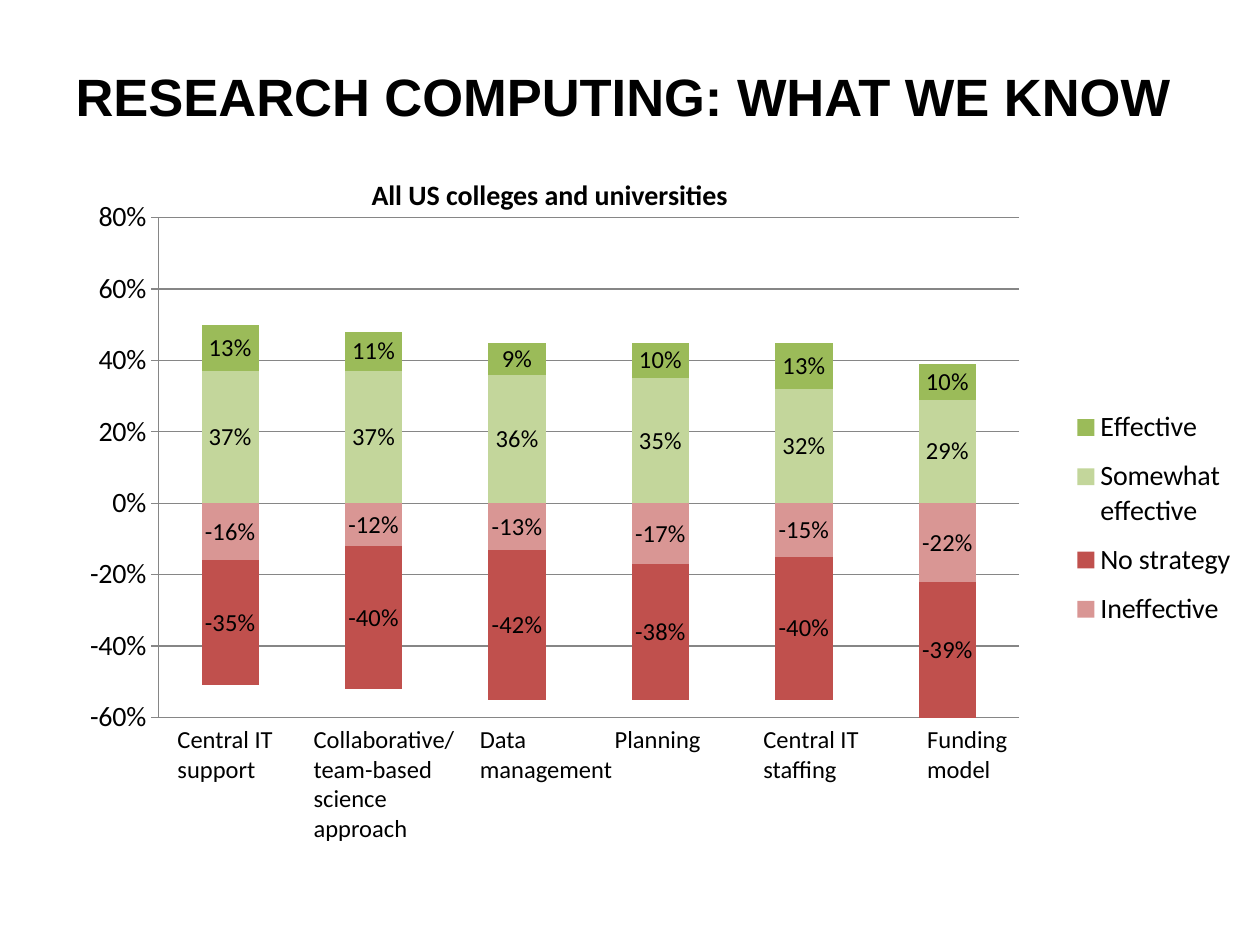
from dataclasses import dataclass

import pptx
import pptx.chart.data
import pptx.dml.color
import pptx.enum.chart
import pptx.enum.text
import pptx.oxml
import pptx.oxml.ns
import pptx.util
from pptx.util import Inches

RGBColor = pptx.dml.color.RGBColor
BLACK = RGBColor(0x00, 0x00, 0x00)
GRID_GRAY = RGBColor(0x86, 0x86, 0x86)
RED = RGBColor(0xC0, 0x50, 0x4D)
LIGHT_RED = RGBColor(0xD9, 0x96, 0x94)
GREEN = RGBColor(0x9B, 0xBB, 0x59)
LIGHT_GREEN = RGBColor(0xC3, 0xD6, 0x9B)


@dataclass
class Rating:
    name: str
    values: tuple[float, ...]
    color: RGBColor


@dataclass
class Caption:
    text: str
    left: float
    top: float
    width: float
    height: float
    size: int = 14
    bold: bool = False


RATINGS = [
    Rating("Ineffective", (-0.16, -0.12, -0.13, -0.17, -0.15, -0.22), LIGHT_RED),
    Rating("No strategy", (-0.35, -0.40, -0.42, -0.38, -0.40, -0.39), RED),
    Rating("Somewhat effective", (0.37, 0.37, 0.36, 0.35, 0.32, 0.29), LIGHT_GREEN),
    Rating("Effective", (0.13, 0.11, 0.09, 0.10, 0.13, 0.10), GREEN),
]

CAPTION_TOP = 5.7
CAPTIONS = [
    Caption("Central IT support", 1.31, CAPTION_TOP, 1.08, 0.57),
    Caption("Collaborative/team-based science approach", 2.39, CAPTION_TOP, 1.32, 1.04),
    Caption("Data management", 3.71, CAPTION_TOP, 1.36, 0.57),
    Caption("Planning", 4.78, CAPTION_TOP, 1.08, 0.34),
    Caption("Central IT staffing", 5.96, CAPTION_TOP, 1.08, 0.57),
    Caption("Funding model", 7.26, CAPTION_TOP, 1.08, 0.57),
    Caption("All US colleges and universities", 2.85, 1.36, 3.21, 0.37, 16, True),
]


def format_font(font, *, size: int, name: str = "Calibri", bold: bool = False) -> None:
    font.name = name
    font.size = pptx.util.Pt(size)
    font.bold = bold
    font.color.rgb = BLACK


def write_text(shape, text: str, *, size: int, name: str = "Calibri", bold: bool = False) -> None:
    shape.text_frame.word_wrap = True
    paragraph = shape.text_frame.paragraphs[0]
    paragraph.alignment = pptx.enum.text.PP_ALIGN.LEFT
    run = paragraph.add_run()
    run.text = text
    format_font(run.font, size=size, name=name, bold=bold)


def add_caption(slide, caption: Caption) -> None:
    shape = slide.shapes.add_textbox(
        Inches(caption.left), Inches(caption.top), Inches(caption.width), Inches(caption.height)
    )
    shape.text_frame.auto_size = pptx.enum.text.MSO_AUTO_SIZE.SHAPE_TO_FIT_TEXT
    write_text(shape, caption.text, size=caption.size, bold=caption.bold)


def set_layout(element, x: float, y: float, width: float, height: float, target: str = "") -> None:
    for old_layout in element.findall(pptx.oxml.ns.qn("c:layout")):
        element.remove(old_layout)
    layout = pptx.oxml.parse_xml(
        f'<c:layout {pptx.oxml.ns.nsdecls("c")}><c:manualLayout>{target}'
        '<c:xMode val="edge"/><c:yMode val="edge"/>'
        f'<c:x val="{x}"/><c:y val="{y}"/><c:w val="{width}"/><c:h val="{height}"/>'
        "</c:manualLayout></c:layout>"
    )
    position = element.find(pptx.oxml.ns.qn("c:legendPos"))
    if position is None:
        element.insert(0, layout)
    else:
        position.addnext(layout)


def add_rating_chart(slide, ratings: list[Rating]) -> None:
    data = pptx.chart.data.CategoryChartData(number_format="0%")
    data.categories = [str(number + 1) for number in range(len(ratings[0].values))]
    for rating in ratings:
        data.add_series(rating.name, rating.values)
    chart = slide.shapes.add_chart(
        pptx.enum.chart.XL_CHART_TYPE.COLUMN_STACKED,
        Inches(0.1), Inches(1.54), Inches(9.9), Inches(4.44), data,
    ).chart
    format_font(chart.font, size=18)
    chart.has_title = False
    chart.category_axis.visible = False

    axis = chart.value_axis
    axis.minimum_scale, axis.maximum_scale, axis.major_unit = -0.6, 0.8, 0.2
    axis.major_tick_mark = pptx.enum.chart.XL_TICK_MARK.OUTSIDE
    axis.has_major_gridlines = True
    for line in (axis.format.line, axis.major_gridlines.format.line):
        line.color.rgb = GRID_GRAY
        line.width = pptx.util.Pt(0.75)
    axis.tick_labels.number_format = "0%"
    axis.tick_labels.number_format_is_linked = False
    format_font(axis.tick_labels.font, size=16)

    chart.has_legend = True
    chart.legend.position = pptx.enum.chart.XL_LEGEND_POSITION.RIGHT
    chart.legend.include_in_layout = False
    format_font(chart.legend.font, size=16)

    plot = chart.plots[0]
    plot.gap_width, plot.overlap = 150, 100
    plot.vary_by_categories = False
    for series, rating in zip(plot.series, ratings):
        series.invert_if_negative = False
        series.format.fill.solid()
        series.format.fill.fore_color.rgb = rating.color
        labels = series.data_labels
        labels.show_value = True
        labels.position = pptx.enum.chart.XL_LABEL_POSITION.CENTER
        labels.number_format = "0%"
        labels.number_format_is_linked = False
        format_font(labels.font, size=14)

    plot_area = chart.element.find(".//" + pptx.oxml.ns.qn("c:plotArea"))
    set_layout(plot_area, 0.117, 0.042, 0.69, 0.894, '<c:layoutTarget val="inner"/>')
    legend = chart.element.find(".//" + pptx.oxml.ns.qn("c:legend"))
    set_layout(legend, 0.84, 0.36, 0.15, 0.44)


def main() -> None:
    presentation = pptx.Presentation()
    presentation.slide_width, presentation.slide_height = Inches(10), Inches(7.5)
    slide = presentation.slides.add_slide(presentation.slide_layouts[5])
    title = slide.shapes.title
    title.left, title.top = Inches(0.5), Inches(0.13)
    title.width, title.height = Inches(9.17), Inches(1.25)
    title.text_frame.vertical_anchor = pptx.enum.text.MSO_ANCHOR.MIDDLE
    write_text(title, "RESEARCH COMPUTING: WHAT WE KNOW", size=30, name="Arial", bold=True)
    add_rating_chart(slide, RATINGS)
    for caption in CAPTIONS:
        add_caption(slide, caption)
    presentation.save("out.pptx")


if __name__ == "__main__":
    main()
